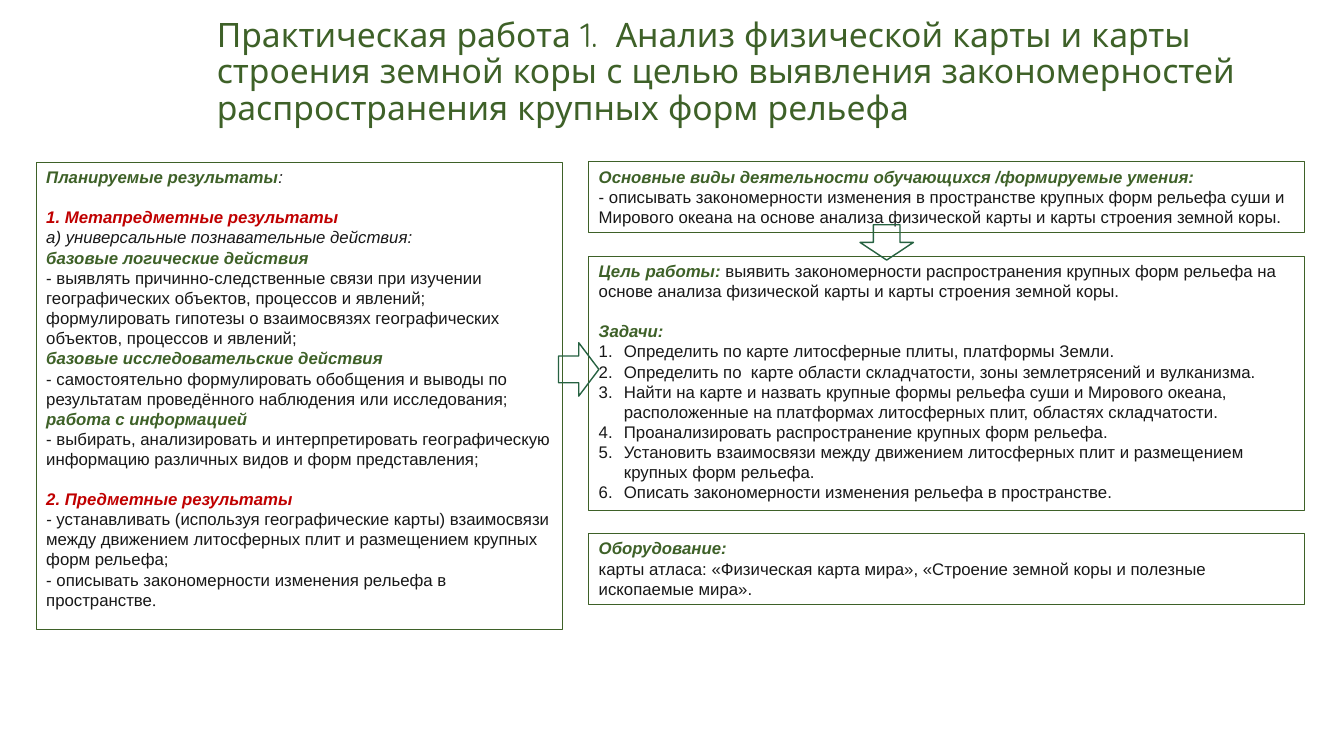
from pptx import Presentation, util as u
from pptx.dml.color import RGBColor
from pptx.enum import shapes, text
from lxml import etree

PX = 9144  # one px is a hundredth of an inch
GREEN = RGBColor(0x3E, 0x61, 0x28)
TEAL = RGBColor(0x26, 0x62, 0x41)
RED = RGBColor(0xC0, 0x00, 0x00)
DARK = RGBColor(0x18, 0x18, 0x18)
GAP = u.Pt(14)
NS = "{http://schemas.openxmlformats.org/drawingml/2006/main}"

# Style: colour, bold, italic
HEAD = (GREEN, True, True)
PART = (RED, True, True)
NOTE = (DARK, False, True)
BODY = (DARK, False, False)

TITLE = ("Практическая работа 1.  Анализ физической карты и карты строения "
         "земной коры с целью выявления закономерностей распространения "
         "крупных форм рельефа")

# A paragraph is a list of (text, style) runs
RESULTS = [
    [("Планируемые результаты", HEAD), (":", NOTE)],
    [("1. Метапредметные результаты", PART)],
    [("а) универсальные познавательные действия:", NOTE)],
    [("базовые логические действия", HEAD)],
    [("- выявлять причинно-следственные связи при изучении географических "
      "объектов, процессов и явлений; формулировать гипотезы о взаимосвязях "
      "географических объектов, процессов и явлений;", BODY)],
    [("базовые исследовательские действия", HEAD)],
    [("- самостоятельно формулировать обобщения и выводы по результатам "
      "проведённого наблюдения или исследования;", BODY)],
    [("работа с информацией", HEAD)],
    [("- выбирать, анализировать и интерпретировать географическую "
      "информацию различных видов и форм представления;", BODY)],
    [("2. Предметные результаты", PART)],
    [("- ", NOTE),
     ("устанавливать (используя географические карты) взаимосвязи между "
      "движением литосферных плит и размещением крупных форм рельефа;", BODY)],
    [("- описывать закономерности изменения рельефа в пространстве", BODY),
     (".", BODY)],
]
SKILLS = [
    [("Основные виды деятельности обучающихся /формируемые умения:", HEAD)],
    [("- описывать закономерности изменения в пространстве крупных форм "
      "рельефа суши и Мирового океана на основе анализа физической карты "
      "и карты строения земной коры.", BODY)],
]
GOAL = [
    [("Цель работы: ", HEAD),
     ("выявить закономерности распространения крупных форм рельефа на основе "
      "анализа физической карты и карты строения земной коры.", BODY)],
    [("Задачи:", HEAD)],
]
TASKS = [
    "Определить по карте литосферные плиты, платформы Земли.",
    "Определить по  карте области складчатости, зоны землетрясений "
    "и вулканизма.",
    "Найти на карте и назвать крупные формы рельефа суши и Мирового океана, "
    "расположенные на платформах литосферных плит, областях складчатости.",
    "Проанализировать распространение крупных форм рельефа.",
    "Установить взаимосвязи между движением литосферных плит и размещением "
    "крупных форм рельефа.",
    "Описать закономерности изменения рельефа в пространстве.",
]
TOOLS = [
    [("Оборудование:", HEAD)],
    [("карты атласа: «Физическая карта мира», «Строение земной коры "
      "и полезные ископаемые мира».", BODY)],
]


def emu(box):
    return [n * PX for n in box]


def paint(font, style):
    font.color.rgb, font.bold, font.italic = style


def outline(slide, kind, box, color, width):
    shape = slide.shapes.add_shape(kind, *emu(box))
    shape.shadow.inherit = False
    shape.fill.background()
    shape.line.color.rgb = color
    shape.line.width = u.Pt(width)
    return shape


def number(para):
    """Make the paragraph an item of a numbered list."""
    props = para._p.get_or_add_pPr()
    props.set("marL", str(25 * PX))
    props.set("indent", str(-25 * PX))
    etree.SubElement(props, NS + "buFont", typeface="+mj-lt")
    etree.SubElement(props, NS + "buAutoNum", type="arabicPeriod")


def write(frame, paras, gaps, listed):
    for i, runs in enumerate(paras):
        para = frame.paragraphs[0] if i == 0 else frame.add_paragraph()
        para.alignment = text.PP_ALIGN.LEFT
        if i in gaps:
            para.space_before = GAP
        if listed and i >= listed:
            number(para)
        para.font.name, para.font.size = "Arial", u.Pt(12)
        same = len({style for _, style in runs}) == 1
        if same:
            paint(para.font, runs[0][1])
        for words, style in runs:
            run = para.add_run()
            run.text = words
            if not same:
                paint(run.font, style)


def panel(slide, box, paras, gaps=(), listed=0):
    """Framed text; gaps are paragraphs set apart, listed starts a list."""
    shape = outline(slide, shapes.MSO_SHAPE.RECTANGLE, box, GREEN, 0.75)
    frame = shape.text_frame
    frame.word_wrap = True
    frame.vertical_anchor = text.MSO_ANCHOR.TOP
    write(frame, paras, gaps, listed)
    return shape


def heading(slide, box):
    title = slide.shapes.title
    title.left, title.top, title.width, title.height = emu(box)
    frame = title.text_frame
    frame.text = TITLE
    frame.word_wrap = True
    frame.auto_size = text.MSO_AUTO_SIZE.NONE
    frame.vertical_anchor = text.MSO_ANCHOR.MIDDLE
    para = frame.paragraphs[0]
    para.alignment = text.PP_ALIGN.LEFT
    para.line_spacing = 0.9
    para.font.name, para.font.size = "Quicksand", u.Pt(24)
    para.font.color.rgb = GREEN


def left(slide, box):
    shape = panel(slide, box, RESULTS, gaps=(1, 9))
    stop = shape.text_frame.paragraphs[-1].runs[-1]
    stop.font.name = "Times New Roman"


def right(slide, box):
    x, y, w, h = box
    small, gap = 71, 23
    mid = h - 2 * (small + gap)
    panel(slide, (x, y, w, small), SKILLS)
    tasks = [[(task, BODY)] for task in TASKS]
    panel(slide, (x, y + small + gap, w, mid), GOAL + tasks,
          gaps=(1,), listed=len(GOAL))
    panel(slide, (x, y + h - small, w, small), TOOLS)


def arrows(slide, box):
    """Arrows into the goal panel, placed from the right column's corner."""
    x, y = box[:2]
    kinds = shapes.MSO_SHAPE
    outline(slide, kinds.RIGHT_ARROW, (x - 30, y + 180, 40, 53), TEAL, 1)
    outline(slide, kinds.DOWN_ARROW, (x + 269, y + 63, 53, 35), TEAL, 1)


def main():
    deck = Presentation()
    deck.slide_width, deck.slide_height = emu((1333, 750))
    slide = deck.slides.add_slide(deck.slide_layouts[5])
    column = (584, 160, 710, 440)
    heading(slide, (205, 0, 1089, 145))
    left(slide, (36, 161, 522, 464))
    right(slide, column)
    arrows(slide, column)
    deck.save("out.pptx")


if __name__ == "__main__":
    main()
